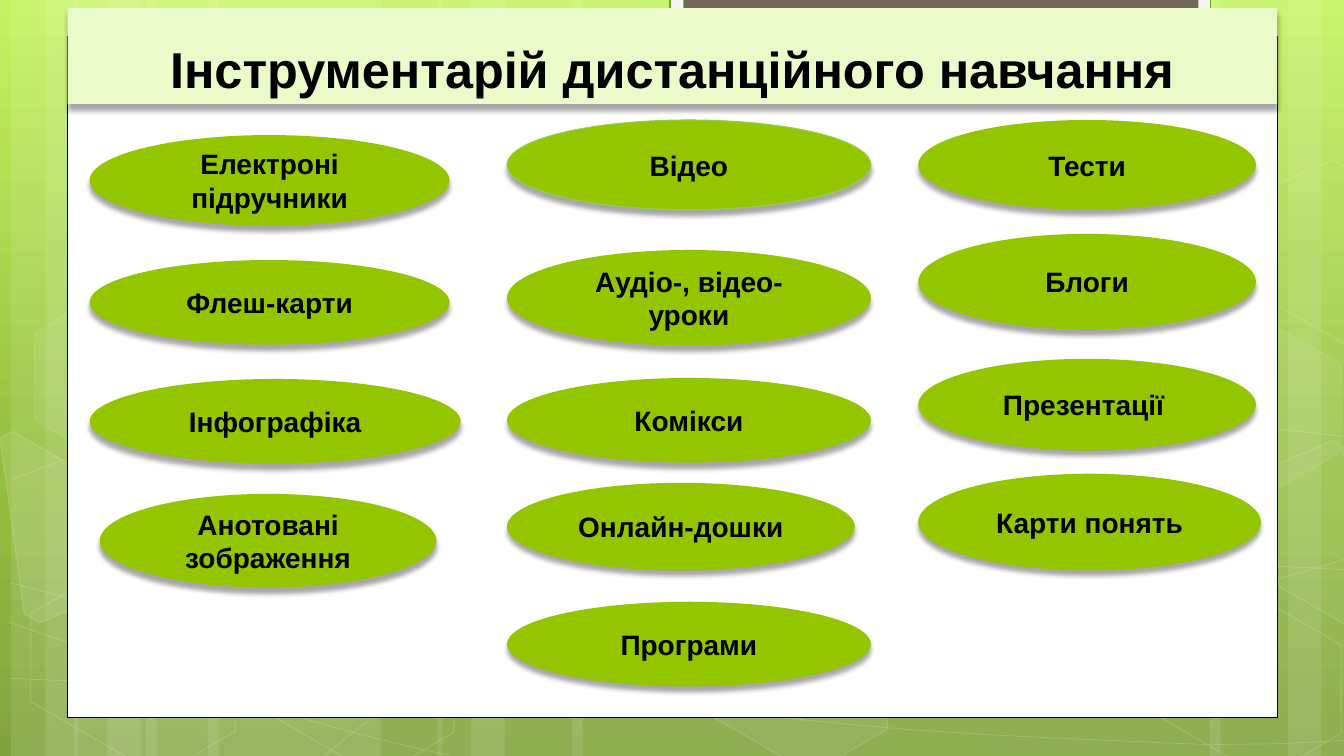
import copy

import lxml.etree
import pptx
import pptx.dml.color
import pptx.enum.shapes
import pptx.enum.text
import pptx.oxml.ns
import pptx.util

COLORS = {
    "sky": "C3F35F", "meadow": "93BF3F", "moss": "81A53E",
    "white": "FFFFFF", "black": "000000", "frame": "F5F5F5",
    "frame_line": "74A510", "tab": "71685A", "title": "EAFAC9",
    "bubble": "94C600", "bubble_line": "92D050", "navy": "002060",
}
SHAPES = pptx.enum.shapes.MSO_SHAPE
ANCHORS = pptx.enum.text.MSO_ANCHOR
qn = pptx.oxml.ns.qn

presentation = pptx.Presentation()
presentation.slide_width = pptx.util.Inches(40 / 3)
presentation.slide_height = pptx.util.Inches(7.5)
slide = presentation.slides.add_slide(presentation.slide_layouts[6])

# Grid of 40/3 columns by 7.5 rows
COLUMN = presentation.slide_width * 3 / 40
ROW = presentation.slide_height / 7.5


def add_block(kind, left, top, width, height, fill=None, fill_alpha=100,
              line=None, line_width=1, line_alpha=100, points=None, closed=True):
    """Add a preset shape on the grid, or an outline through points."""
    if points:
        corners = [(x * COLUMN, y * ROW) for x, y in points]
        builder = slide.shapes.build_freeform(*corners[0])
        builder.add_line_segments(corners[1:], close=closed)
        shape = builder.convert_to_shape()
    else:
        shape = slide.shapes.add_shape(
            kind, round(left * COLUMN), round(top * ROW),
            round(width * COLUMN), round(height * ROW))
    shape.shadow.inherit = False
    paints = ((shape.fill, fill, fill_alpha, "a:solidFill"),
              (shape.line.fill, line, line_alpha, "a:ln/a:solidFill"))
    for paint, color, alpha, place in paints:
        if color is None:
            paint.background()
            continue
        paint.solid()
        paint.fore_color.rgb = pptx.dml.color.RGBColor.from_string(COLORS[color])
        if alpha < 100:
            steps = [qn(step) for step in (place + "/a:srgbClr").split("/")]
            tint = shape._element.spPr.find("/".join(steps))
            lxml.etree.SubElement(tint, qn("a:alpha"), val=str(alpha * 1000))
    if line:
        shape.line.width = pptx.util.Pt(line_width)
    return shape


def add_caption(shape, text, size, anchor, side, edge):
    """Write a bold centred caption and drop a soft shadow below the shape."""
    frame_format = {
        "word_wrap": True, "vertical_anchor": anchor,
        "margin_left": round(side * COLUMN), "margin_right": round(side * COLUMN),
        "margin_top": round(edge * ROW), "margin_bottom": round(edge * ROW),
    }
    for name, value in frame_format.items():
        setattr(shape.text_frame, name, value)
    paragraph = shape.text_frame.paragraphs[0]
    paragraph.alignment = pptx.enum.text.PP_ALIGN.CENTER
    words = text.rstrip()
    pieces = [(words, "Arial", size, True, "black")]
    if words != text:
        pieces.append((" ", "TeX Gyre Adventor", 18, False, "navy"))
    for piece, typeface, points, bold, color in pieces:
        run = paragraph.add_run()
        run.text = piece
        font_format = {"name": typeface, "size": pptx.util.Pt(points), "bold": bold}
        for name, value in font_format.items():
            setattr(run.font, name, value)
        run.font.color.rgb = pptx.dml.color.RGBColor.from_string(COLORS[color])
    effects = shape._element.spPr.find(qn("a:effectLst"))
    shadow = lxml.etree.SubElement(
        effects, qn("a:outerShdw"), blurRad=str(pptx.util.Pt(3.5)),
        dist=str(pptx.util.Pt(4)), dir="5400000", algn="ctr", rotWithShape="0")
    tint = lxml.etree.SubElement(shadow, qn("a:srgbClr"), val=COLORS["black"])
    lxml.etree.SubElement(tint, qn("a:alpha"), val="34000")


# Background gradient, top to bottom
background = slide.background.fill
background.gradient()
background.gradient_angle = 270
stop_list = next(slide._element.iter(qn("a:gsLst")))
stop_list.insert(1, copy.deepcopy(stop_list[0]))
stops = (("sky", 0), ("meadow", 0.62), ("moss", 1))
for stop, (color, position) in zip(background.gradient_stops, stops):
    stop.color.rgb = pptx.dml.color.RGBColor.from_string(COLORS[color])
    stop.position = position

# Pale vertical stripes: left, width
stripes = [
    (1.45, 2.33), (0.11, 0.67), (0.45, 1.11), (2.06, 2.33), (0.73, 0.67),
    (1.06, 1.11), (9.78, 2.33), (12.78, 0.67), (12, 1.11), (5.67, 4.11),
    (4.34, 0.67), (4.67, 1.11),
]
for left, width in stripes:
    add_block(SHAPES.RECTANGLE, left, 0, width, 7.5, "white", 10)

# Thin waves: a start point, then two control points and an end per bend
waves = [
    [(0.1, 6.73), (0.82, 6.76), (1.54, 6.79), (2.54, 6.78), (3.54, 6.77),
     (4.77, 6.75), (6.1, 6.65), (7.44, 6.55), (9.33, 6.36), (10.55, 6.17),
     (11.78, 5.98), (13.03, 5.68), (13.43, 5.51)],
    [(0.1, 4.77), (0.48, 4.61), (0.86, 4.46), (1.62, 4.31), (2.38, 4.16),
     (3.45, 3.94), (4.63, 3.87), (5.82, 3.8), (7.25, 3.79), (8.72, 3.87),
     (10.19, 3.95), (12.63, 4.26), (13.43, 4.34)],
    [(0.08, 6.17), (1.69, 6.72), (3.3, 7.27), (4.46, 7.49)],
    [(0.1, 5.78), (0.51, 5.89), (0.93, 6), (1.71, 6.16), (2.48, 6.31),
     (3.64, 6.56), (4.75, 6.73), (5.86, 6.9), (7.27, 7.08), (8.37, 7.18),
     (9.48, 7.29), (10.66, 7.33), (11.37, 7.36), (12.07, 7.4), (12.25, 7.38),
     (12.6, 7.38), (12.94, 7.37), (13.19, 7.35), (13.43, 7.34)],
    [(3.23, 7.49), (3.47, 7.29), (3.7, 7.09), (4.03, 6.91), (4.35, 6.73),
     (4.8, 6.53), (5.17, 6.39), (5.54, 6.25), (5.77, 6.19), (6.26, 6.09),
     (6.75, 5.99), (7.65, 5.85), (8.11, 5.78), (8.58, 5.71), (8.65, 5.71),
     (9.07, 5.69), (9.48, 5.66), (10.13, 5.63), (10.59, 5.62), (11.05, 5.61),
     (11.82, 5.62), (11.82, 5.62), (12.1, 5.62), (12.4, 5.62), (12.7, 5.62),
     (12.95, 5.63), (13.17, 5.64), (13.41, 5.66)],
]
for wave in waves:
    shape = add_block(None, 0, 0, 0, 0, line="white", line_width=0.5,
                      line_alpha=20, points=wave, closed=False)
    # Turn each three straight steps into one bend
    outline = next(shape._element.iter(qn("a:path")))
    steps = outline.findall(qn("a:lnTo"))
    for first in range(0, len(steps), 3):
        bend = lxml.etree.SubElement(outline, qn("a:cubicBezTo"))
        for step in steps[first:first + 3]:
            bend.append(step[0])
            outline.remove(step)

# Tilted hexagons: left, top, fill opacity, line opacity
hexagons = [
    (4.45, 0.36, 4, 8), (6.62, 5.89, 6, 12), (0.15, 5.91, 0, 12),
    (0.19, 3.12, 7, 8), (2.32, 5.92, 0, 12), (11.12, 5.93, 0, 12),
    (11.12, 3.14, 7, 8),
]
for left, top, fill_alpha, line_alpha in hexagons:
    hexagon = add_block(SHAPES.HEXAGON, left, top, 2.34, 1.52,
                        "white" if fill_alpha else None, fill_alpha,
                        "white", 1, line_alpha)
    hexagon.rotation = 30
    hexagon.adjustments[0] = 0.285

# Hexagons cut by the slide edges
cut_hexagons = [
    (10, [(0, 4.34), (0.13, 4.28), (1.15, 4.87), (1.27, 5.81), (0.39, 6.18),
          (0.24, 6.09)]),
    (4, [(12.35, 4.74), (13.23, 4.37), (13.32, 4.43), (13.57, 6.25),
         (13.49, 6.28), (12.47, 5.69)]),
    (0, [(12.35, 1.96), (13.23, 1.59), (13.34, 1.65), (13.57, 3.46),
         (13.49, 3.5), (12.47, 2.91)]),
]
for fill_alpha, points in cut_hexagons:
    add_block(None, 0, 0, 0, 0, "white" if fill_alpha else None, fill_alpha,
              "white", 1, 12, points)

# Content panel, top tab and title
add_block(SHAPES.RECTANGLE, 0.67, 0.36, 12, 6.76, "white", line="black", line_width=0.5)
add_block(SHAPES.RECTANGLE, 6.65, -0.02, 5.36, 0.76, "frame",
          line="frame_line", line_width=1.25)
add_block(SHAPES.RECTANGLE, 6.78, -0.02, 5.11, 0.68, "tab")
title = add_block(SHAPES.RECTANGLE, 0.67, 0.08, 12, 0.95, "title")
add_caption(title, "Інструментарій дистанційного навчання", 36, ANCHORS.BOTTOM, 0.1, 0.05)

# Tool bubbles by column: text, indent, top, width, height
bubble_columns = {
    0.89: [("Електроні підручники", 0, 1.34, 3.57, 0.9),
           ("Флеш-карти", 0, 2.58, 3.57, 0.84),
           ("Інфографіка", 0, 3.76, 3.68, 0.84),
           ("Анотовані зображення", 0.1, 4.9, 3.34, 0.93)],
    5.03: [("Відео", 0, 1.19, 3.61, 0.89), ("Аудіо-, відео-уроки", 0, 2.48, 3.61, 0.95),
           ("Комікси", 0, 3.75, 3.61, 0.84), ("Онлайн-дошки", 0, 4.79, 3.45, 0.87),
           ("Програми", 0, 5.97, 3.61, 0.84)],
    9.11: [("Тести", 0, 1.19, 3.35, 0.89), ("Блоги", 0, 2.32, 3.35, 0.95),
           ("Презентації ", 0, 3.56, 3.35, 0.91), ("Карти понять", 0, 4.7, 3.4, 0.96)],
}
for column_left, bubbles in bubble_columns.items():
    for text, indent, top, width, height in bubbles:
        edge_color = "bubble_line" if text == "Відео" else None
        bubble = add_block(SHAPES.OVAL, column_left + indent, top, width, height,
                           "bubble", line=edge_color, line_width=0.75)
        add_caption(bubble, text, 20, ANCHORS.MIDDLE, 0.13, 0.07)

presentation.save("out.pptx")
